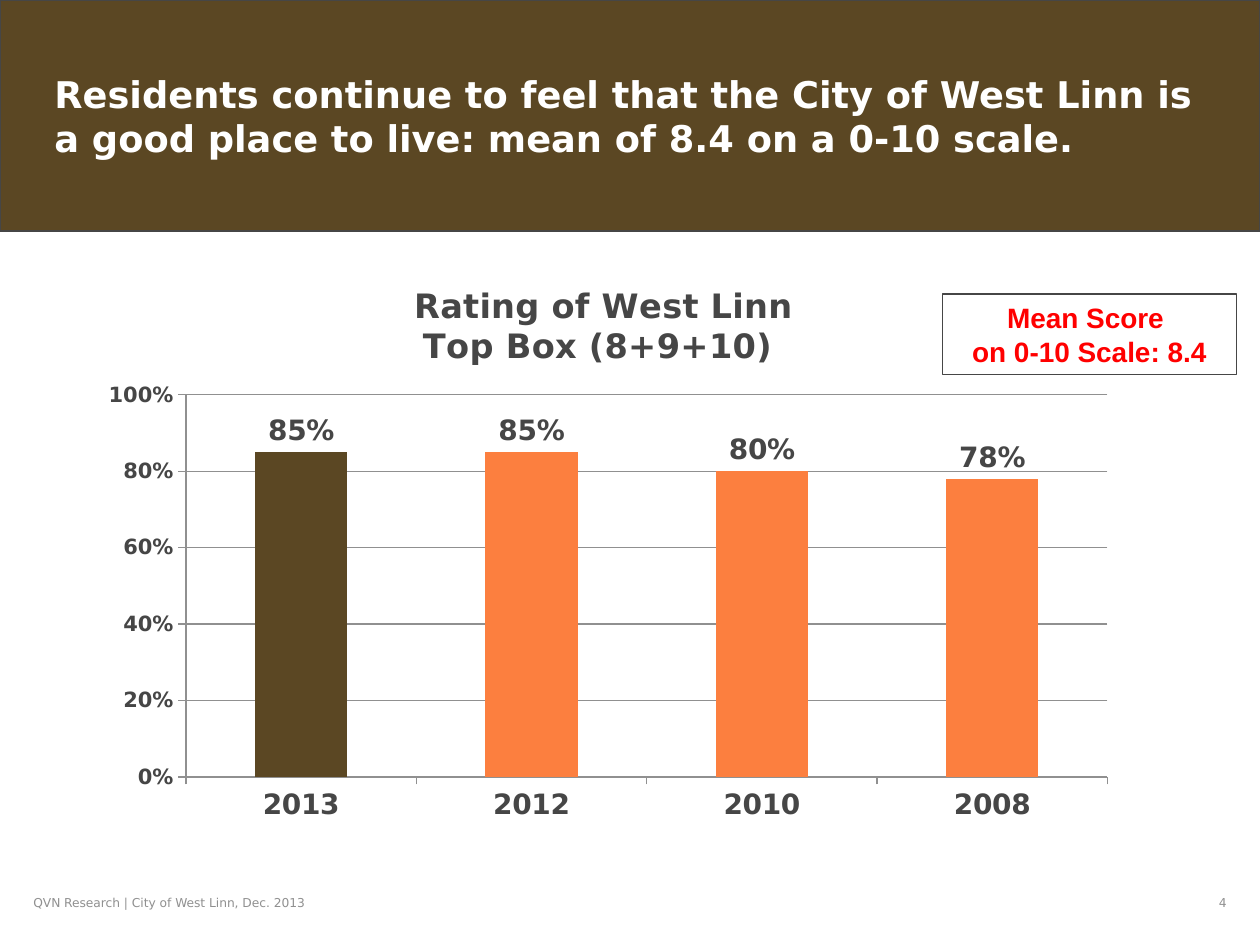
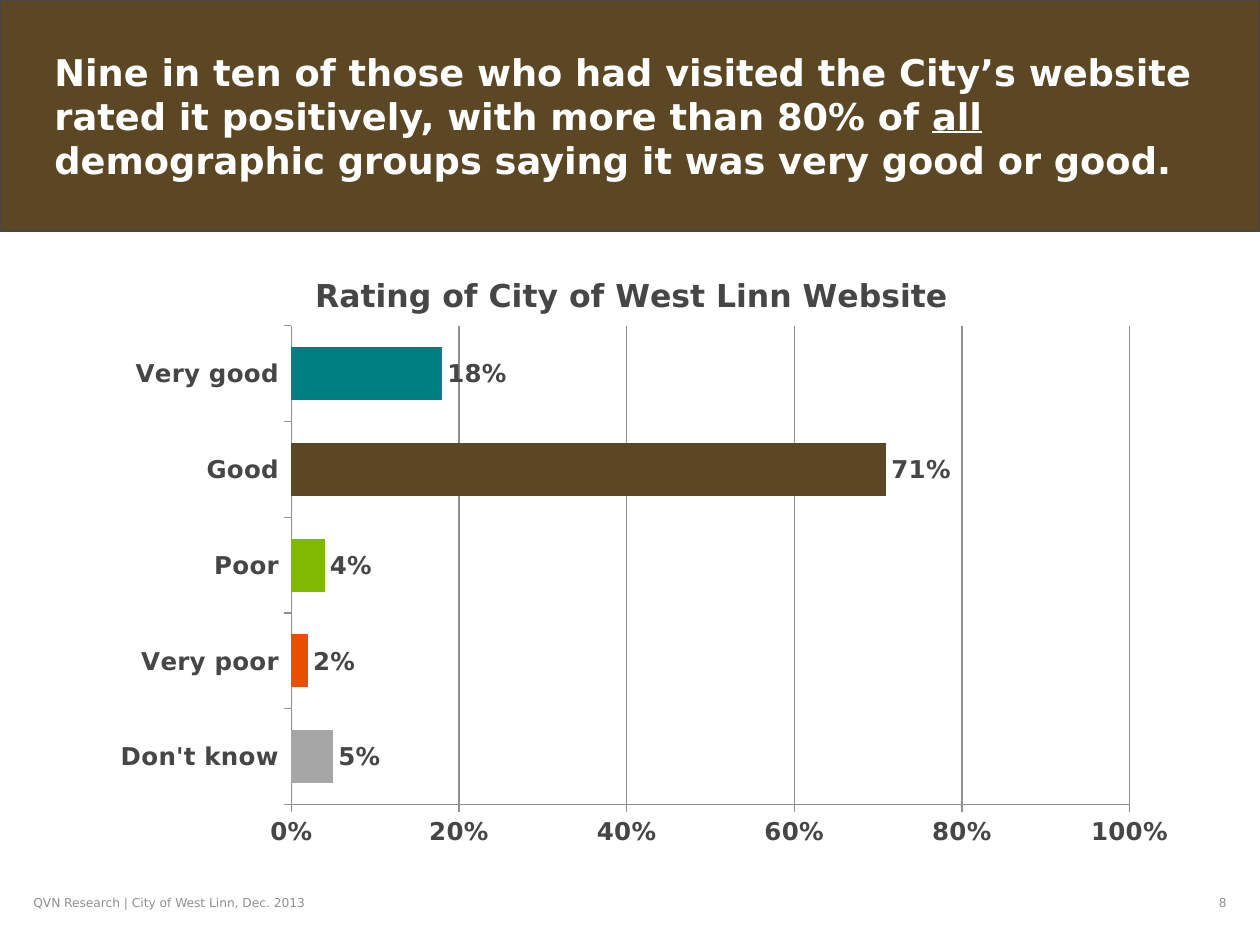
import pptx
import pptx.chart.data
import pptx.dml.color
import pptx.enum.chart
import pptx.enum.shapes
import pptx.enum.text
import pptx.oxml
import pptx.oxml.ns
import pptx.util

Pt = pptx.util.Pt
Align = pptx.enum.text.PP_ALIGN
ChartType = pptx.enum.chart.XL_CHART_TYPE

BROWN, ORANGE, TEAL, GREEN, RED_ORANGE, SILVER = (
    "5B4723", "FC7F3F", "007F82", "7FBA00", "EA4F00", "A6A6A6")
DARK, GRAY, WHITE, RED = "464646", "909090", "FFFFFF", "FF0000"
FONT = "DejaVu Sans"
FOOTER = "QVN Research | City of West Linn, Dec. 2013"


def color(hex_string):
    return pptx.dml.color.RGBColor.from_string(hex_string)


def add_text(slide, box, text, size, hex_color, bold=False, align=Align.LEFT, font=FONT):
    """Add a middle-anchored text box; text between underscores is underlined."""
    shape = slide.shapes.add_textbox(*map(Pt, box))
    frame = shape.text_frame
    frame.word_wrap = True
    frame.vertical_anchor = pptx.enum.text.MSO_ANCHOR.MIDDLE
    for index, line in enumerate(text.split("\n")):
        paragraph = frame.add_paragraph() if index else frame.paragraphs[0]
        paragraph.alignment = align
        for position, part in enumerate(line.split("_")):
            run = paragraph.add_run()
            run.text = part
            run.font.name, run.font.size, run.font.bold = font, Pt(size), bold
            run.font.color.rgb = color(hex_color)
            if position % 2:
                run.font.underline = True
    return shape


SLIDES = [
    dict(
        number="4",
        title="Residents continue to feel that the City of West Linn is a good place "
              "to live: mean of 8.4 on a 0-10 scale.",
        title_box=(24, 36, 672, 60),
        chart_type=ChartType.COLUMN_CLUSTERED,
        chart_box=(42, 150, 606, 336),
        chart_title="Rating of West Linn\nTop Box (8+9+10) ",
        chart_title_size=19.2,
        chart_title_place=None,
        plot_place=dict(x=0.106, y=0.225, w=0.869, h=0.65),
        bars=[("2013", 0.85, BROWN), ("2012", 0.85, ORANGE),
              ("2010", 0.8, ORANGE), ("2008", 0.78, ORANGE)],
        gap=150, category_size=16, value_size=12, label_size=16,
    ),
    dict(
        number="8",
        title="Nine in ten of those who had visited the City’s website rated it "
              "positively, with more than 80% of _all_ demographic groups saying it "
              "was very good or good.",
        title_box=(24, 24, 672, 84),
        chart_type=ChartType.BAR_CLUSTERED,
        chart_box=(42, 150, 642, 348),
        chart_title="Rating of City of West Linn Website",
        chart_title_size=18,
        chart_title_place=dict(x=0.21, y=0.01),
        plot_place=dict(x=0.194, y=0.104, w=0.746, h=0.786),
        bars=[("Don't know", 0.05, SILVER), ("Very poor", 0.02, RED_ORANGE),
              ("Poor", 0.04, GREEN), ("Good", 0.71, BROWN), ("Very good", 0.18, TEAL)],
        gap=80, category_size=14, value_size=14, label_size=14,
    ),
]

presentation = pptx.Presentation()
presentation.slide_width, presentation.slide_height = Pt(720), Pt(540)

for content in SLIDES:
    slide = presentation.slides.add_slide(presentation.slide_layouts[6])

    # Band, title and footer
    band = slide.shapes.add_shape(
        pptx.enum.shapes.MSO_SHAPE.RECTANGLE, 0, 0, Pt(720), Pt(132))
    band.shadow.inherit = False
    band.fill.solid()
    band.fill.fore_color.rgb = color(BROWN)
    band.line.color.rgb = color(DARK)
    band.line.width = Pt(0.75)
    add_text(slide, content["title_box"], content["title"], 21, WHITE, bold=True)
    add_text(slide, (558, 504, 150, 24), content["number"], 7, GRAY, align=Align.RIGHT)
    add_text(slide, (12, 504, 246, 24), FOOTER, 7, GRAY)

    # Chart
    names, values, fills = zip(*content["bars"])
    chart_data = pptx.chart.data.CategoryChartData(number_format="0%")
    chart_data.categories = names
    chart_data.add_series("Series 1", values)
    chart = slide.shapes.add_chart(
        content["chart_type"], *map(Pt, content["chart_box"]), chart_data).chart
    chart.has_legend = False
    chart.font.name = FONT
    chart.font.size = Pt(content["label_size"])
    chart.font.color.rgb = color(DARK)

    chart.has_title = True
    title_frame = chart.chart_title.text_frame
    title_frame.text = content["chart_title"]
    for paragraph in title_frame.paragraphs:
        font = paragraph.runs[0].font
        font.name, font.bold = FONT, True
        font.size = Pt(content["chart_title_size"])
        font.color.rgb = color(DARK)

    plot = chart.plots[0]
    plot.vary_by_categories = False
    plot.gap_width = content["gap"]
    series = plot.series[0]
    series.format.fill.solid()
    series.format.fill.fore_color.rgb = color(BROWN)
    for index, fill in enumerate(fills):
        if fill != BROWN:
            point_fill = series.points[index].format.fill
            point_fill.solid()
            point_fill.fore_color.rgb = color(fill)

    plot.has_data_labels = True
    labels = plot.data_labels
    labels.show_value = True
    labels.number_format, labels.number_format_is_linked = "0%", False
    labels.position = pptx.enum.chart.XL_LABEL_POSITION.OUTSIDE_END
    labels.font.name, labels.font.bold = FONT, True
    labels.font.size = Pt(content["label_size"])
    labels.font.color.rgb = color(DARK)

    for axis, size in ((chart.category_axis, content["category_size"]),
                       (chart.value_axis, content["value_size"])):
        axis.major_tick_mark = pptx.enum.chart.XL_TICK_MARK.OUTSIDE
        axis.minor_tick_mark = pptx.enum.chart.XL_TICK_MARK.NONE
        axis.format.line.color.rgb = color(GRAY)
        font = axis.tick_labels.font
        font.name, font.size, font.bold = FONT, Pt(size), True
        font.color.rgb = color(DARK)
    value_axis = chart.value_axis
    value_axis.minimum_scale, value_axis.maximum_scale = 0, 1
    value_axis.major_unit = 0.2
    value_axis.has_major_gridlines = True
    value_axis.major_gridlines.format.line.color.rgb = color(GRAY)
    value_axis.tick_labels.number_format = "0%"
    value_axis.tick_labels.number_format_is_linked = False

    # Fixed places for the plot area and, where given, the chart title
    plot_area = chart.element.find(".//" + pptx.oxml.ns.qn("c:plotArea"))
    title_element = chart.element.find(".//" + pptx.oxml.ns.qn("c:title"))
    for parent, place, target, slot in (
            (plot_area, content["plot_place"], '<c:layoutTarget val="inner"/>', 0),
            (title_element, content["chart_title_place"], "", 1)):
        if place is None:
            continue
        previous = parent.find(pptx.oxml.ns.qn("c:layout"))
        if previous is not None:
            parent.remove(previous)
        modes = "".join(f'<c:{key}Mode val="edge"/>' for key in "xy")
        sizes = "".join(f'<c:{key} val="{value}"/>' for key, value in place.items())
        parent.insert(slot, pptx.oxml.parse_xml(
            f'<c:layout {pptx.oxml.ns.nsdecls("c")}><c:manualLayout>'
            f'{target}{modes}{sizes}</c:manualLayout></c:layout>'))

mean_score = add_text(
    presentation.slides[0], (538.5, 168, 168, 46), "Mean Score \non 0-10 Scale: 8.4",
    16, RED, bold=True, align=Align.CENTER, font="Arial")
mean_score.line.color.rgb = color(DARK)
mean_score.line.width = Pt(0.75)

presentation.save("out.pptx")
